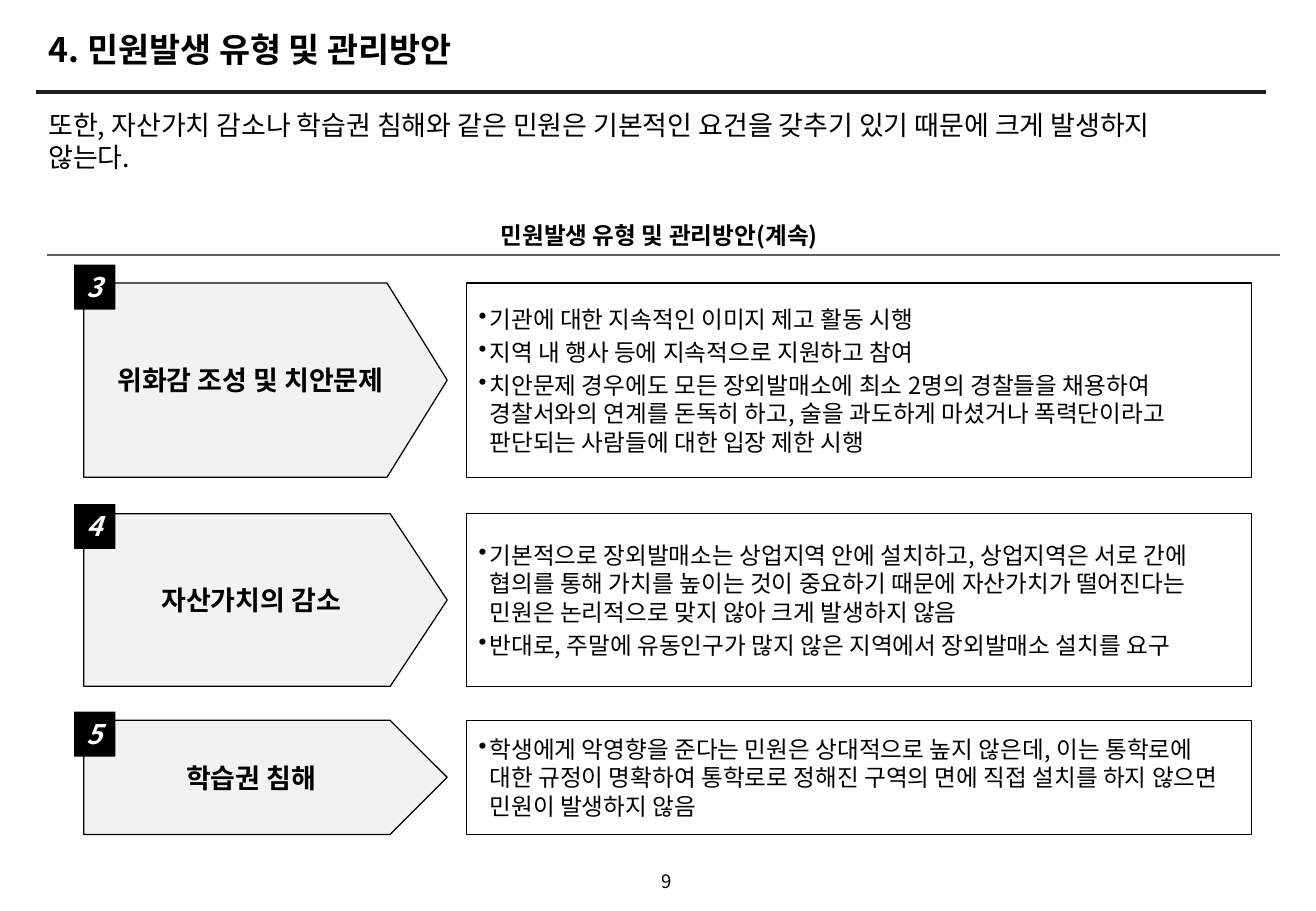
"""Build the slide on complaint types and how each is managed."""
import dataclasses

import lxml.etree
import pptx
import pptx.dml.color
import pptx.enum.shapes
import pptx.enum.text
import pptx.oxml.ns
import pptx.util

Inches = pptx.util.Inches
Pt = pptx.util.Pt
Shape = pptx.enum.shapes.MSO_SHAPE
Align = pptx.enum.text.PP_ALIGN
Anchor = pptx.enum.text.MSO_ANCHOR
qn = pptx.oxml.ns.qn
rgb = pptx.dml.color.RGBColor.from_string


@dataclasses.dataclass
class Theme:
    font: str = "Noto Sans CJK KR"
    ink: str = "000000"
    paper: str = "FFFFFF"
    pale: str = "F2F2F2"
    rule: str = "1C1C1C"
    gray: str = "5F5F5F"
    title: int = 20
    large: int = 16
    small: int = 14
    page: int = 11


theme = Theme()


def write(shape, text, size=theme.small, color=theme.ink, bold=False, italic=False,
          align=Align.LEFT, anchor=Anchor.MIDDLE, bullet=False, wrap=True):
    """Fill a shape with one paragraph per line of text."""
    frame = shape.text_frame
    frame.word_wrap = wrap
    frame.vertical_anchor = anchor
    frame.margin_left = frame.margin_right = Inches(0.1)
    frame.margin_top = frame.margin_bottom = Inches(0.05)
    for i, line in enumerate(text.split("\n")):
        para = frame.paragraphs[0] if i == 0 else frame.add_paragraph()
        para.alignment = align
        para.line_spacing = Pt(round(size * 1.2, 1))
        if i:
            para.space_before = Pt(size * 0.2)
        if bullet:
            props = para._p.get_or_add_pPr()
            props.set("marL", str(Inches(0.09)))
            props.set("indent", str(-Inches(0.09)))
            lxml.etree.SubElement(props, qn("a:buChar")).set("char", "•")
        run = para.add_run()
        run.text = line
        font = run.font
        font.name, font.size = theme.font, Pt(size)
        font.bold, font.italic = bold, italic
        font.color.rgb = rgb(color)
        east = lxml.etree.SubElement(run._r.get_or_add_rPr(), qn("a:ea"))
        east.set("typeface", theme.font)


def block(kind, left, top, width, height, fill, edge=True):
    """Add a filled shape, with a thin outline if wanted."""
    shape = slide.shapes.add_shape(kind, Inches(left), Inches(top), Inches(width), Inches(height))
    shape.shadow.inherit = False
    shape.fill.solid()
    shape.fill.fore_color.rgb = rgb(fill)
    if edge:
        shape.line.color.rgb = rgb(theme.ink)
        shape.line.width = Pt(0.75)
    else:
        shape.line.fill.background()
    return shape


deck = pptx.Presentation()
deck.slide_width, deck.slide_height = Inches(10.83), Inches(7.5)
slide = deck.slides.add_slide(deck.slide_layouts[6])

rules = [
    (0.3, 10.42, 0.76, theme.rule, 2.25),
    (0.39, 10.53, 2.1, theme.gray, 1.5),
]
for start, end, top, color, width in rules:
    line = slide.shapes.add_connector(pptx.enum.shapes.MSO_CONNECTOR.STRAIGHT,
                                      Inches(start), Inches(top), Inches(end), Inches(top))
    line.line.color.rgb = rgb(color)
    line.line.width = Pt(width)
    lxml.etree.SubElement(line._element.spPr, qn("a:effectLst"))

texts = [
    (0.3, 0.13, 9.75, 0.55, "4. 민원발생 유형 및 관리방안",
     dict(size=theme.title, bold=True)),
    (0.3, 0.84, 9.92, 0.58,
     "또한, 자산가치 감소나 학습권 침해와 같은 민원은 기본적인 요건을 갖추기 있기 때문에 크게 발생하지 않는다.",
     dict(size=theme.large, anchor=Anchor.TOP)),
    (0.39, 1.78, 10.07, 0.31, "민원발생 유형 및 관리방안(계속)",
     dict(bold=True, align=Align.CENTER, wrap=False)),
    (4.87, 7.06, 1.24, 0.39, "9", dict(size=theme.page, align=Align.CENTER)),
]
for left, top, width, height, text, style in texts:
    box = slide.shapes.add_textbox(Inches(left), Inches(top), Inches(width), Inches(height))
    write(box, text, **style)

rows = [
    ("3", 2.33, 1.6, 0.31, 2.18, "위화감 조성 및 치안문제",
     "기관에 대한 지속적인 이미지 제고 활동 시행\n"
     "지역 내 행사 등에 지속적으로 지원하고 참여\n"
     "치안문제 경우에도 모든 장외발매소에 최소 2명의 경찰들을 채용하여 경찰서와의 연계를 돈독히 하고, "
     "술을 과도하게 마셨거나 폭력단이라고 판단되는 사람들에 대한 입장 제한 시행"),
    ("4", 4.23, 1.42, 0.33, 4.15, "자산가치의 감소",
     "기본적으로 장외발매소는 상업지역 안에 설치하고, 상업지역은 서로 간에 협의를 통해 가치를 높이는 것이 "
     "중요하기 때문에 자산가치가 떨어진다는 민원은 논리적으로 맞지 않아 크게 발생하지 않음\n"
     "반대로, 주말에 유동인구가 많지 않은 지역에서 장외발매소 설치를 요구"),
    ("5", 5.93, 0.94, 0.5, 5.86, "학습권 침해",
     "학생에게 악영향을 준다는 민원은 상대적으로 높지 않은데, 이는 통학로에 대한 규정이 명확하여 "
     "통학로로 정해진 구역의 면에 직접 설치를 하지 않으면 민원이 발생하지 않음"),
]
for number, top, height, point, badge, label, notes in rows:
    arrow = block(Shape.PENTAGON, 0.69, top, 2.99, height, theme.pale)
    arrow.adjustments[0] = point
    write(arrow, label, size=theme.large, bold=True, align=Align.CENTER)
    write(block(Shape.RECTANGLE, 3.84, top, 6.46, height, theme.paper), notes, bullet=True)
    write(block(Shape.RECTANGLE, 0.61, badge, 0.34, 0.37, theme.ink, edge=False), number,
          size=theme.large, color=theme.paper, bold=True, italic=True,
          anchor=Anchor.TOP, wrap=False)

deck.save("out.pptx")
